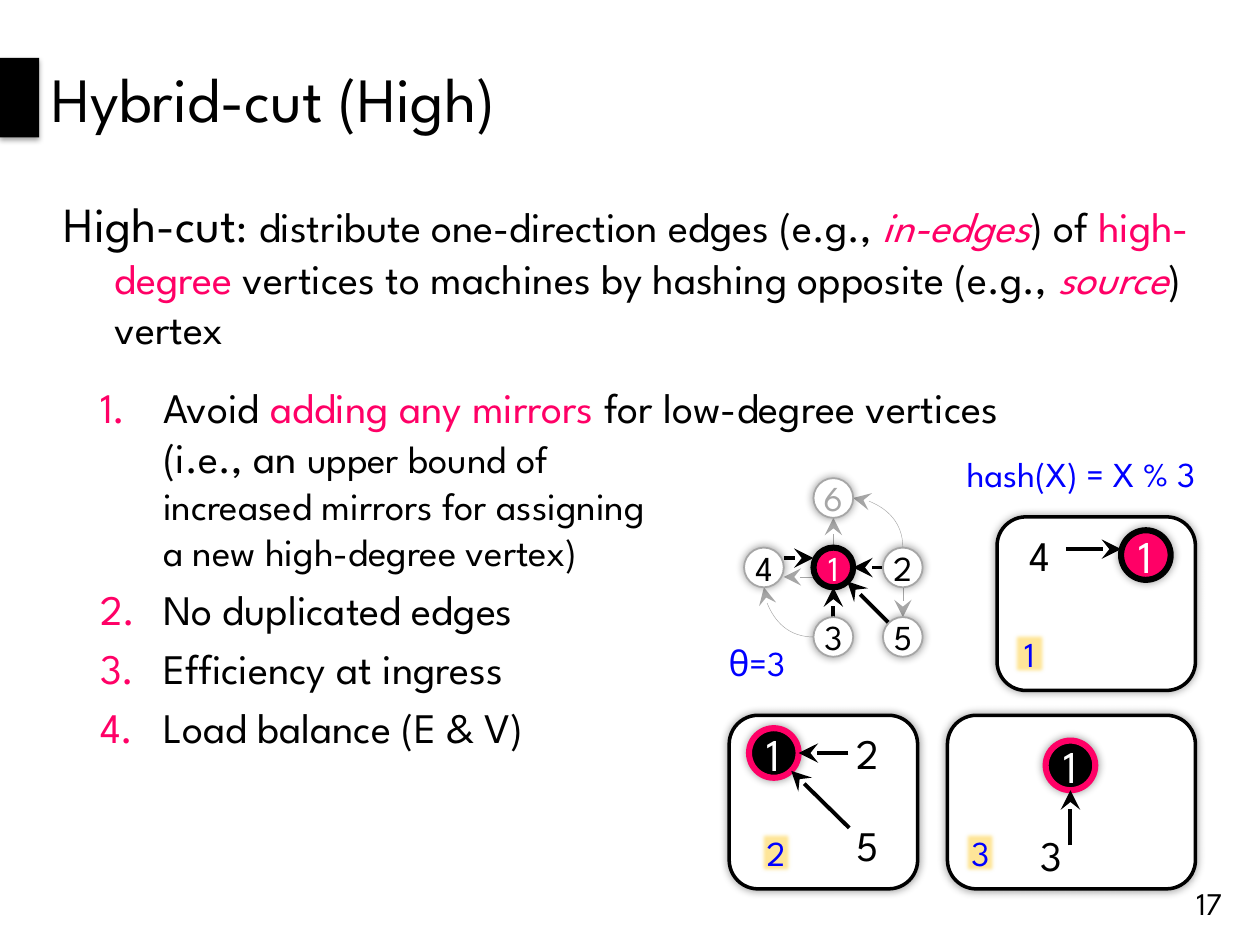
from lxml import etree
from pptx import Presentation
from pptx.dml.color import RGBColor
from pptx.enum.shapes import MSO_CONNECTOR, MSO_SHAPE
from pptx.enum.text import MSO_ANCHOR, PP_ALIGN
from pptx.oxml import parse_xml
from pptx.oxml.ns import nsdecls, qn
from pptx.util import Cm, Pt

OVAL, RECT, ROUNDED = MSO_SHAPE.OVAL, MSO_SHAPE.RECTANGLE, MSO_SHAPE.ROUNDED_RECTANGLE
STRAIGHT, CURVE = MSO_CONNECTOR.STRAIGHT, MSO_CONNECTOR.CURVE
LEFT, CENTER, RIGHT = PP_ALIGN.LEFT, PP_ALIGN.CENTER, PP_ALIGN.RIGHT
MIDDLE = MSO_ANCHOR.MIDDLE
FONT = "League Spartan"
COLORS = {"black": "000000", "white": "FFFFFF", "pink": "FF0066",
          "gray": "A6A6A6", "blue": "0000FF", "glow": "FFE699"}
RGB = {name: RGBColor.from_string(value) for name, value in COLORS.items()}

prs = Presentation()
prs.slide_width, prs.slide_height = Cm(25.4), Cm(19.05)
slide = prs.slides.add_slide(prs.slide_layouts[6])


def add_box(kind, left, top, width, height, fill=None, line=None, line_width=1,
            shadow=None, text="", size=20, color="black", align=CENTER):
    """Shape with optional fill, outline, shadow (alpha, blur, distance) and text."""
    box = slide.shapes.add_shape(kind, Cm(left), Cm(top), Cm(width), Cm(height))
    box.shadow.inherit = False
    if fill:
        box.fill.solid()
        box.fill.fore_color.rgb = RGB[fill]
    else:
        box.fill.background()
    if line:
        box.line.color.rgb = RGB[line]
        box.line.width = Pt(line_width)
    else:
        box.line.fill.background()
    if shadow:
        alpha, blur, distance = shadow
        box._element.spPr.find(qn("a:effectLst")).append(parse_xml(
            f'<a:outerShdw {nsdecls("a")} blurRad="{Pt(blur)}" dist="{Pt(distance)}" '
            f'dir="5400000" algn="ctr" rotWithShape="0"><a:srgbClr val="{COLORS["black"]}">'
            f'<a:alpha val="{alpha * 1000}"/></a:srgbClr></a:outerShdw>'))
    frame = box.text_frame
    frame.margin_left = frame.margin_right = frame.margin_top = frame.margin_bottom = 0
    frame.vertical_anchor = MIDDLE
    if text:
        frame.text = text
        frame.paragraphs[0].alignment = align
        font = frame.paragraphs[0].runs[0].font
        font.name, font.size, font.color.rgb = FONT, Pt(size), RGB[color]
    return box


def add_arrow(kind, start, end, color, width):
    arrow = slide.shapes.add_connector(kind, *(Cm(value) for value in (*start, *end)))
    arrow.line.color.rgb = RGB[color]
    arrow.line.width = Pt(width)
    etree.SubElement(arrow.line._get_or_add_ln(), qn("a:tailEnd"),
                     type="stealth", w="lg", len="lg")
    etree.SubElement(arrow._element.spPr, qn("a:effectLst"))
    return arrow


# Title and its marker
title = add_box(RECT, 1.04, 0, 24.36, 3.94, text="Hybrid-cut (High)", size=36, align=LEFT)
add_box(RECT, 0, 1.17, 0.79, 1.6, fill="black", shadow=(35, 3.1, 1.8))

# Definition and numbered benefits: (text, size, colour), "\n" breaks the line
definition = [
    ("High-cut", 28, "black"), (":", 24, "black"), (" ", 28, "black"),
    ("distribute one-direction edges (e.g., ", 24, "black"), ("in-edges", 24, "pink"),
    (") of ", 24, "black"), ("high-degree", 24, "pink"),
    (" vertices to machines by hashing opposite (e.g., ", 24, "black"),
    ("source", 24, "pink"), (") vertex", 24, "black")]
benefits = [
    [("Avoid ", 24, "black"), ("adding any mirrors", 24, "pink"),
     (" for low-degree vertices", 24, "black"), ("\n", 24, "black"),
     ("(i.e., an ", 24, "black"), ("upper bound of ", 22, "black"), ("\n", 22, "black"),
     ("increased mirrors for assigning", 22, "black"), ("\n", 22, "black"),
     ("a new high-degree vertex)", 22, "black")],
    [("No duplicated edges", 24, "black")],
    [("Efficiency at ingress", 24, "black")],
    [("Load balance (E & V)", 24, "black")]]
body = slide.shapes.add_textbox(Cm(1.04), Cm(3.78), Cm(23.67), Cm(13.26)).text_frame
body.word_wrap = True
for index, pieces in enumerate([definition] + benefits):
    paragraph = body.paragraphs[0] if index == 0 else body.add_paragraph()
    paragraph.space_before = Pt(16 if index == 1 else 5)
    margin, indent = (2, -1.27) if index else (1.02, -1.02)
    properties = paragraph._p.get_or_add_pPr()
    properties.set("marL", str(Cm(margin)))
    properties.set("indent", str(Cm(indent)))
    if index:
        bullet_color = etree.SubElement(properties, qn("a:buClr"))
        etree.SubElement(bullet_color, qn("a:srgbClr"), val=COLORS["pink"])
        etree.SubElement(properties, qn("a:buFont"), typeface=FONT)
        etree.SubElement(properties, qn("a:buAutoNum"), type="arabicPeriod")
    for text, size, color in pieces:
        if text == "\n":
            paragraph.add_line_break()
            continue
        run = paragraph.add_run()
        run.text = text
        run.font.name, run.font.size, run.font.color.rgb = FONT, Pt(size), RGB[color]
        run.font.italic = text in ("in-edges", "source")

# Graph: nodes on a 3 x 3 grid around vertex 1
center_x, center_y, pitch, node_size = 16.8, 11.44, 1.4, 0.8
SOFT = (40, 5, 0)
nodes = [("6", 0, -1), ("2", 1, 0), ("4", -1, 0), ("3", 0, 1), ("5", 1, 1), ("1", 0, 0)]
other_edges = [((16.8, 11.04), (16.8, 10.44)), ((18.2, 11.84), (18.2, 12.44)),
               ((16.4, 11.63), (15.8, 11.63))]
in_edges = [((15.8, 11.25), (16.4, 11.25)), ((17.8, 11.44), (17.2, 11.44)),
            ((17.92, 12.56), (17.08, 11.72)), ((16.8, 12.44), (16.8, 11.84))]
for start, end in other_edges:
    add_arrow(STRAIGHT, start, end, "gray", 0.25)
# Quarter arcs 2 -> 6 and 3 -> 4: corner, rotation in degrees, vertical flip
for left, top, degrees, flip in [(17.2, 10.04, 270, "1"), (15.4, 11.84, 180, "0")]:
    arc = add_arrow(CURVE, (left, top), (left + 1, top + 1), "gray", 0.25)
    arc._element.spPr.find(qn("a:prstGeom")).set("prst", "curvedConnector2")
    transform = arc._element.spPr.find(qn("a:xfrm"))
    transform.set("rot", str(degrees * 60000))
    transform.set("flipV", flip)
for start, end in in_edges:
    add_arrow(STRAIGHT, start, end, "black", 2.25)
for vertex, column, row in nodes:
    is_high = vertex == "1"
    add_box(OVAL, center_x + column * pitch - node_size / 2,
            center_y + row * pitch - node_size / 2, node_size, node_size,
            fill="pink" if is_high else "white", line="black" if is_high else "gray",
            line_width=3.5 if is_high else 1, shadow=SOFT, text=vertex,
            color={"1": "white", "6": "gray"}.get(vertex, "black"))

# Machines
for left, top, width in [(19.1, 14.42, 5), (14.7, 14.42, 3.8), (20.1, 10.42, 4)]:
    add_box(ROUNDED, left, top, width, 3.5, fill="white", line="black", line_width=2,
            shadow=SOFT)

# Vertices placed on the machines: plain sources, then copies of vertex 1
for vertex, x, y in [("2", 17.49, 15.18), ("5", 17.49, 17.03),
                     ("3", 21.2, 17.23), ("4", 20.97, 11.19)]:
    add_box(OVAL, x - 0.5, y - 0.5, 1, 1, fill="white", text=vertex, size=24)
for x, y, fill, ring in [(15.6, 15.18, "black", "pink"), (21.58, 15.43, "black", "pink"),
                         (23.1, 11.19, "pink", "black")]:
    add_box(OVAL, x - 0.5, y - 0.5, 1, 1, fill=fill, line=ring, line_width=3.5,
            shadow=SOFT, text="1", size=26, color="white")
for start, end in [((17.1, 15.18), (16.1, 15.18)), ((17.12, 16.69), (15.95, 15.54)),
                   ((21.58, 17.04), (21.58, 15.93)), ((21.49, 11.07), (22.6, 11.07))]:
    add_arrow(STRAIGHT, start, end, "black", 2.25)

# Machine numbers on soft-edged patches
for number, left, top in [("2", 15.29, 16.74), ("3", 19.41, 16.74), ("1", 20.4, 12.73)]:
    patch = add_box(RECT, left, top, 0.71, 0.89, fill="glow", text=number, color="blue")
    etree.SubElement(patch._element.spPr.find(qn("a:effectLst")), qn("a:softEdge"),
                     rad=str(Pt(2.5)))

# Hash function, threshold and page number
for text, left, top, width in [("hash(X) = X % 3", 18.7, 8.92, 5.4),
                               ("θ=3", 14.1, 12.73, 1.73)]:
    note = add_box(RECT, left, top, width, 1.4, text=text, color="blue", align=RIGHT)
    note.text_frame.paragraphs[0].line_spacing = 0.8
add_box(RECT, 23.7, 17.7, 0.94, 1.02, text="17", size=18, align=RIGHT)

prs.save("out.pptx")
